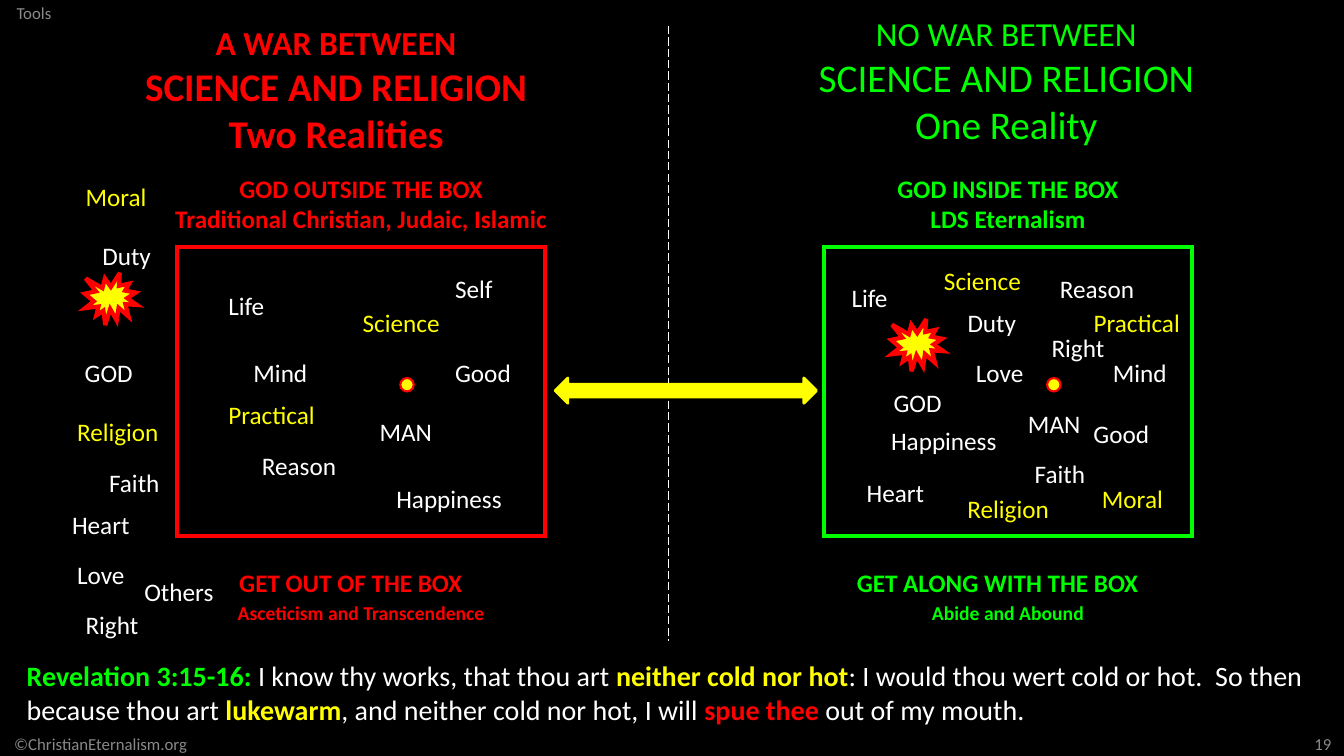
from dataclasses import dataclass
from typing import NamedTuple

from lxml import etree
from pptx import Presentation
from pptx import util as u
from pptx.dml.color import RGBColor
from pptx.enum import dml, shapes, text
from pptx.oxml import ns

COLS, ROWS = 160, 90
SHIFT = 77


@dataclass(frozen=True)
class Theme:
    font: str = "Calibri"
    black: str = "000000"
    white: str = "FFFFFF"
    red: str = "FF0000"
    green: str = "00FF00"
    gold: str = "FFFF00"
    gray: str = "898989"
    pale: str = "8C8C8C"
    note: int = 12
    small: int = 14
    body: int = 18
    verse: int = 20
    lead: int = 24
    head: int = 28


class Area(NamedTuple):
    col: float
    row: float
    wide: float
    high: float


class Line(NamedTuple):
    words: str
    size: int


class Word(NamedTuple):
    name: str
    wide: float
    spots: tuple
    key: bool = False


class Side(NamedTuple):
    hue: str
    shift: float
    bold: bool
    area: Area
    head: tuple
    top: tuple
    foot: tuple
    burst: Area


T = Theme()
MID = text.PP_ALIGN.CENTER

SIDES = (
    Side(T.red, 0, True, Area(0, 2, 80, 17.4),
         ("A WAR BETWEEN", "SCIENCE AND RELIGION", "Two Realities"),
         ("GOD OUTSIDE THE BOX", "Traditional Christian, Judaic, Islamic"),
         ("GET OUT OF THE BOX ", "Asceticism and Transcendence"),
         Area(10.1, 32.5, 6.2, 6.2)),
    Side(T.green, SHIFT, False, Area(79.6, 1, 80.4, 17.4),
         ("NO WAR BETWEEN", "SCIENCE AND RELIGION", "One Reality"),
         ("GOD INSIDE THE BOX", "LDS Eternalism"),
         ("GET ALONG WITH THE BOX ", "Abide and Abound"),
         Area(106.1, 38, 6.2, 6.2)),
)

WORDS = (
    Word("GOD", 8.9, ((8.9, 42), (105.2, 45.5))),
    Word("MAN", 8.8, ((44, 49), (121.2, 48))),
    Word("Faith", 9.2, ((11.8, 55), (122, 54))),
    Word("Reason", 11.4, ((30, 53), (125, 32))),
    Word("Heart", 10.1, ((7.4, 60.1), (102, 56.2))),
    Word("Mind", 8.9, ((29, 42), (131.3, 42))),
    Word("Science", 11.8, ((42, 36), (111.2, 31)), True),
    Word("Religion", 12.2, ((8, 49), (114, 58.1)), True),
    Word("Life", 6.7, ((26, 34), (100.2, 33))),
    Word("Love", 8.2, ((8, 66), (115, 42))),
    Word("Happiness", 15.1, ((46, 57), (104.9, 50))),
    Word("Good", 9.1, ((53, 42), (129, 49.2))),
    Word("Duty", 8.3, ((11, 28), (114, 36))),
    Word("Right", 8.8, ((9, 72), (124, 39))),
    Word("Self", 7, ((53, 32),)),
    Word("Others", 10.7, ((16, 68),)),
    Word("Practical", 12.8, ((26, 47), (129, 36)), True),
    Word("Moral", 9.7, ((9, 21), (130, 57)), True),
)

VERSE = (
    ("Revelation 3:15-16: ", T.green, True),
    ("I know thy works, that thou art ", T.white, False),
    ("neither cold nor hot", T.gold, True),
    (": I would thou wert cold or hot.  So then because thou art ", T.white, False),
    ("lukewarm", T.gold, True),
    (", and neither cold nor hot, I will ", T.white, False),
    ("spue thee ", T.red, True),
    ("out of my mouth.", T.white, False),
)

deck = Presentation()
deck.slide_width, deck.slide_height = u.Inches(13.333), u.Inches(7.5)


def across(cols: float) -> int:
    return round(deck.slide_width * cols / COLS)


def down(rows: float) -> int:
    return round(deck.slide_height * rows / ROWS)


def place(area: Area) -> tuple:
    return across(area.col), down(area.row), across(area.wide), down(area.high)


def style(font, size: int, hue: str, bold: bool) -> None:
    font.name, font.size, font.bold = T.font, u.Pt(size), bold
    font.color.rgb = RGBColor.from_string(hue)


def write(box, lines: list, hue: str, bold: bool = False, align=MID,
          anchor=text.MSO_ANCHOR.TOP, wrap: bool = True) -> None:
    frame = box.text_frame
    frame.word_wrap = wrap
    frame.auto_size = text.MSO_AUTO_SIZE.NONE
    frame.vertical_anchor = anchor
    for i, line in enumerate(lines):
        para = frame.add_paragraph() if i else frame.paragraphs[0]
        para.text, para.alignment = line.words, align
        style(para.font, line.size, hue, bold)


def label(slide, area: Area, lines: list, hue: str, **kind) -> None:
    write(slide.shapes.add_textbox(*place(area)), lines, hue, **kind)


def draw(slide, kind, area: Area, hue: str, width: float, fill: str = "",
         sharp: bool = True) -> None:
    shape = slide.shapes.add_shape(kind, *place(area))
    shape.shadow.inherit = False
    if fill:
        shape.fill.solid()
        shape.fill.fore_color.rgb = RGBColor.from_string(fill)
    else:
        shape.fill.background()
    shape.line.color.rgb = RGBColor.from_string(hue)
    shape.line.width = u.Pt(width)
    if sharp:
        edge = shape.element.spPr.find(ns.qn("a:ln"))
        etree.SubElement(edge, ns.qn("a:miter"), lim="800000")


def panel(slide, side: Side) -> None:
    kinds = shapes.MSO_SHAPE
    left = side.shift
    label(slide, Area(18 + left, 71, 50, 4.1), [Line(side.foot[1], T.small)],
          side.hue, bold=True)
    label(slide, Area(13.2 + left, 67, 57.8, 4.8), [Line(side.foot[0], T.body)],
          side.hue, bold=True)
    draw(slide, kinds.RECTANGLE, Area(21.1 + left, 29.4, 43.8, 34.4), side.hue, 3)
    label(slide, Area(7 + left, 20, 72, 8.5), [Line(s, T.body) for s in side.top],
          side.hue, bold=True)
    draw(slide, kinds.EXPLOSION1, side.burst, T.red, 3, T.gold)
    draw(slide, kinds.OVAL, Area(47.65 + left, 45, 1.6, 1.6), T.red, 1.5, T.gold)


def divide(slide) -> None:
    line = slide.shapes.add_connector(
        shapes.MSO_CONNECTOR.STRAIGHT,
        across(79.6), down(3.1), across(79.6), down(76.3))
    line.line.color.rgb = RGBColor.from_string(T.white)
    line.line.width = u.Pt(0.75)
    line.line.dash_style = dml.MSO_LINE.LONG_DASH
    etree.SubElement(line.element.spPr, ns.qn("a:effectLst"))


def quote(slide) -> None:
    box = slide.shapes.add_textbox(*place(Area(2, 77.8, 157, 9.2)))
    box.text_frame.word_wrap = True
    para = box.text_frame.paragraphs[0]
    for words, hue, bold in VERSE:
        run = para.add_run()
        run.text = words
        style(run.font, T.verse, hue, bold)


def main() -> None:
    slide = deck.slides.add_slide(deck.slide_layouts[5])
    slide.background.fill.solid()
    slide.background.fill.fore_color.rgb = RGBColor.from_string(T.black)

    for words, hue, area in (
            ("Tools", T.pale, Area(0.1, 0, 7.9, 3)),
            ("©ChristianEternalism.org", T.gray, Area(0, 87, 24, 3)),
            ("19", T.gray, Area(155, 87, 5, 3))):
        label(slide, area, [Line(words, T.note)], hue, anchor=text.MSO_ANCHOR.MIDDLE)

    title = slide.shapes.title
    title.left, title.top, title.width, title.height = place(SIDES[0].area)
    right = slide.shapes.add_textbox(*place(SIDES[1].area))
    for side, box in zip(SIDES, (title, right)):
        panel(slide, side)
        sizes = (T.lead, T.head, T.head)
        write(box, [Line(*pair) for pair in zip(side.head, sizes)], side.hue, side.bold)

    for word in WORDS:
        for col, row in word.spots:
            label(slide, Area(col, row, word.wide, 4.8), [Line(word.name, T.body)],
                  T.gold if word.key else T.white,
                  align=text.PP_ALIGN.LEFT, wrap=False)

    divide(slide)
    quote(slide)
    draw(slide, shapes.MSO_SHAPE.LEFT_RIGHT_ARROW, Area(66.1, 45, 31.1, 3),
         T.gold, 2, T.gold, sharp=False)
    deck.save("out.pptx")


if __name__ == "__main__":
    main()
